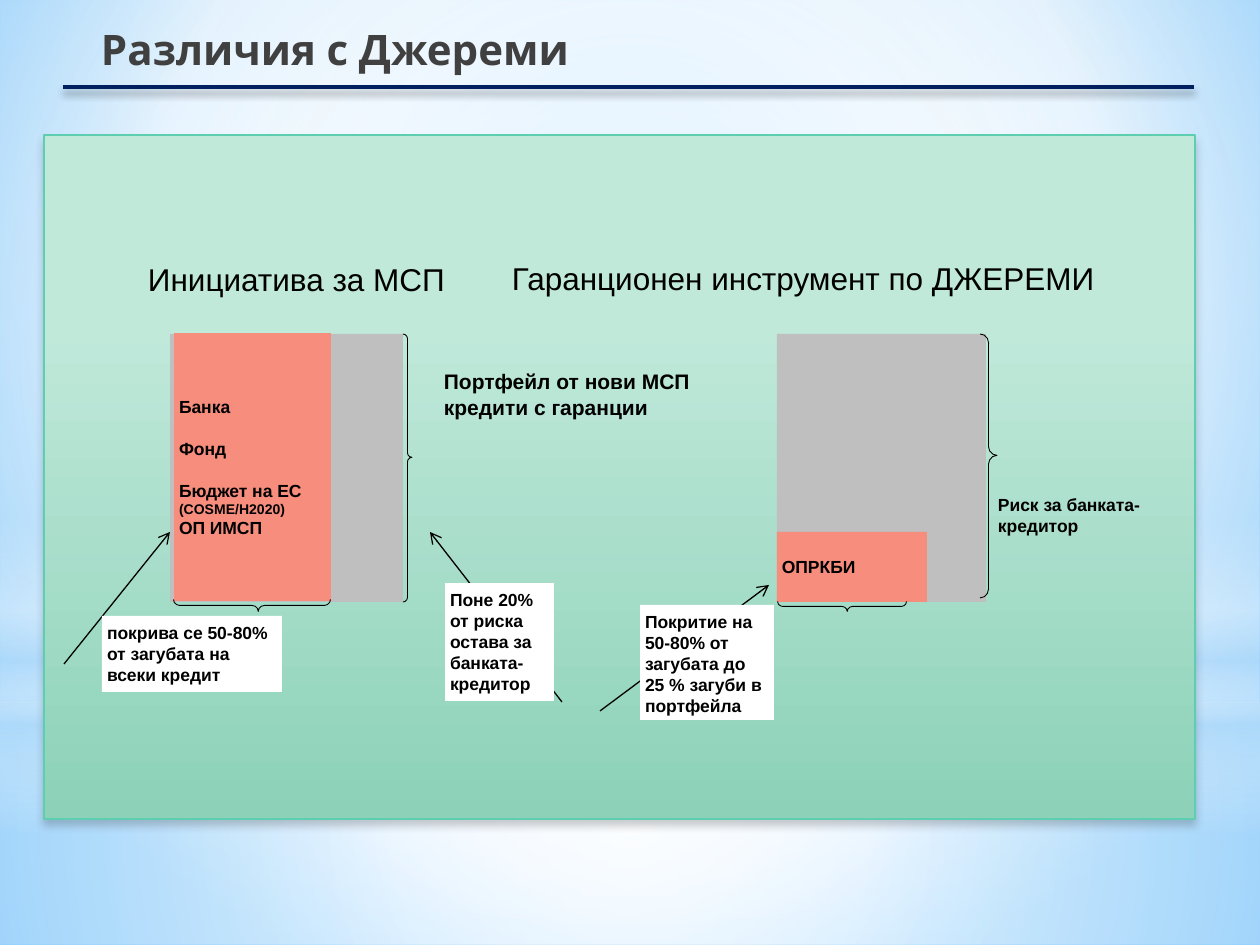
from lxml import etree
from pptx import Presentation
from pptx.dml.color import RGBColor
from pptx.enum.shapes import MSO_CONNECTOR, MSO_SHAPE
from pptx.enum.text import MSO_ANCHOR, PP_ALIGN
from pptx.oxml import parse_xml
from pptx.oxml.ns import nsdecls, qn
from pptx.util import Inches, Pt

SCALE = Inches(10) / 1260
RECTANGLE, OVAL, BRACE = MSO_SHAPE.RECTANGLE, MSO_SHAPE.OVAL, MSO_SHAPE.RIGHT_BRACE
STRAIGHT = MSO_CONNECTOR.STRAIGHT
TOP, MIDDLE = MSO_ANCHOR.TOP, MSO_ANCHOR.MIDDLE
LEFT = PP_ALIGN.LEFT
COLORS = {
    "white": "FFFFFF", "black": "000000", "sky": "B4DCFA", "light_blue": "9ED5FF",
    "blue": "5BB9FF", "mint": "C0E9DA", "green": "8CD1B8", "edge": "5DCEAF",
    "gray": "BFBFBF", "coral": "F78D7C", "navy": "002060", "title": "404040",
}
CENTER = (50, 50, 50, 50)
NOTE_INSETS = (5, 6, 5, 6)
BAR_INSETS = (5, 5, 10, 5)
TEXT_INSETS = (13, 6, 13, 6)


def px(*values):
    """Turn px lengths into EMU."""
    return [round(value * SCALE) for value in values]


def rgb(name):
    """Return the named colour."""
    return RGBColor.from_string(COLORS[name])


def put_gradient(properties, stops, focus=None):
    """Replace a fill by a vertical gradient, or a circular one around focus."""
    stop_xml = "".join(
        f'<a:gs pos="{place * 1000}"><a:srgbClr val="{COLORS[color]}">'
        f'<a:alpha val="{alpha * 1000}"/></a:srgbClr></a:gs>'
        for place, color, alpha in stops)
    if focus:
        sides = " ".join(f'{side}="{value * 1000}"' for side, value in zip("ltrb", focus))
        shade = f'<a:path path="circle"><a:fillToRect {sides}/></a:path>'
    else:
        shade = '<a:lin ang="5400000" scaled="0"/>'
    gradient = parse_xml(f'<a:gradFill {nsdecls("a")} rotWithShape="1">'
                         f'<a:gsLst>{stop_xml}</a:gsLst>{shade}</a:gradFill>')
    properties.replace(properties.find(qn("a:solidFill")), gradient)


def put_shadow(properties, alpha=0, blur=0, distance=0):
    """Give a downward shadow, or none when alpha is zero."""
    for old in properties.findall(qn("a:effectLst")):
        properties.remove(old)
    effects = etree.SubElement(properties, qn("a:effectLst"))
    if alpha:
        shadow = etree.SubElement(effects, qn("a:outerShdw"), blurRad=str(Pt(blur)),
                                  dist=str(Pt(distance)), dir="5400000", rotWithShape="0")
        color = etree.SubElement(shadow, qn("a:srgbClr"), val=COLORS["black"])
        etree.SubElement(color, qn("a:alpha"), val=str(alpha * 1000))


def add_block(page, box, color="white", kind=RECTANGLE):
    """Add a plain filled shape without outline."""
    shape = page.shapes.add_shape(kind, *px(*box))
    shape.shadow.inherit = False
    shape.fill.solid()
    shape.fill.fore_color.rgb = rgb(color)
    shape.line.fill.background()
    return shape


def add_glow(page, box, stops, focus=None, kind=RECTANGLE):
    """Add a gradient shape."""
    shape = add_block(page, box, kind=kind)
    put_gradient(shape._element.spPr, stops, focus)
    return shape


def add_line(page, start, end, color="black", width=0.75, arrow=True):
    """Add a straight line, with an open arrowhead at its end if wanted."""
    line = page.shapes.add_connector(STRAIGHT, *px(*start, *end))
    line.line.color.rgb = rgb(color)
    line.line.width = Pt(width)
    properties = line._element.spPr
    if arrow:
        etree.SubElement(properties.find(qn("a:ln")), qn("a:tailEnd"), type="arrow")
    put_shadow(properties)
    return line


def add_brace(page, box, rotation=0):
    """Add a thin right brace."""
    brace = page.shapes.add_shape(BRACE, *px(*box))
    brace.shadow.inherit = False
    brace.fill.background()
    brace.line.color.rgb = rgb("black")
    brace.line.width = Pt(0.5)
    brace.adjustments[0], brace.adjustments[1] = 0.52, 0.46
    brace.rotation = rotation


def format_span(span, size, bold=True, font="Arial", color="black"):
    """Set the font of a run."""
    span.font.size = Pt(size)
    span.font.bold = bold
    span.font.name = font
    span.font.color.rgb = rgb(color)


def write(shape, paragraphs, size=10, insets=TEXT_INSETS, anchor=TOP, wrap=True, **style):
    """Write left-aligned paragraphs into a shape."""
    frame = shape.text_frame
    frame.text = "\n".join(paragraphs)
    frame.word_wrap = wrap
    frame.vertical_anchor = anchor
    (frame.margin_left, frame.margin_top,
     frame.margin_right, frame.margin_bottom) = px(*insets)
    for para in frame.paragraphs:
        para.alignment = LEFT
        for span in para.runs:
            format_span(span, size, **style)
    return frame


def add_label(page, box, text, **style):
    """Add a text box."""
    write(page.shapes.add_textbox(*px(*box)), [text], **style)


def add_note(page, box, text):
    """Add a white note."""
    write(add_block(page, box), [text], insets=NOTE_INSETS)


def add_backdrop(page):
    """Paint the sky and the green panel."""
    page.background.fill.solid()
    put_gradient(page._element.find(".//" + qn("p:bgPr")),
                 [(0, "light_blue", 100), (60, "white", 100), (100, "blue", 100)],
                 (20, 10, 20, 60))
    add_glow(page, (0, 703, 1260, 242),
             [(0, "white", 91), (37, "white", 76), (100, "sky", 79)], CENTER)
    add_glow(page, (0, 0, 1260, 703),
             [(0, "white", 89), (48, "white", 62), (100, "sky", 79)], CENTER)
    add_glow(page, (0, 519, 1260, 315),
             [(0, "white", 0), (29, "white", 30), (45, "sky", 40),
              (55, "white", 26), (65, "sky", 60), (100, "white", 0)])
    add_glow(page, (0, 220, 1260, 703),
             [(0, "white", 100), (56, "white", 0)], CENTER, OVAL)
    panel = add_glow(page, (44, 135, 1151, 684), [(28, "mint", 100), (100, "green", 100)])
    panel.line.color.rgb = rgb("edge")
    panel.line.width = Pt(0.75)
    put_shadow(panel._element.spPr, 20, 5, 4)


def add_title(page):
    """Add the title and its rule."""
    rule = add_line(page, (63, 87), (1194, 87), "navy", 2.25, arrow=False)
    put_shadow(rule._element.spPr, 40, 4, 3)
    add_label(page, (63, 12, 1131, 73), "Различия с Джереми", size=24, font="Karla",
              color="title", anchor=MIDDLE, insets=(38, 6, 13, 6))


def add_initiative(page):
    """Draw the portfolio of the SME initiative."""
    add_line(page, (562, 702), (430, 532))
    add_line(page, (64, 664), (170, 532))
    add_note(page, (445, 583, 109, 118), "Поне 20% от риска остава за банката-кредитор")
    add_note(page, (102, 616, 180, 76), "покрива се 50-80% от загубата на всеки кредит")
    add_label(page, (135, 254, 334, 50), "Инициатива за МСП", size=18, bold=False, wrap=False)
    add_label(page, (431, 363, 318, 63), "Портфейл от нови МСП кредити с гаранции", size=12)
    add_block(page, (170, 334, 233, 268), "gray")
    frame = write(add_block(page, (174, 333, 157, 268), "coral"),
                  ["Банка", "Фонд", "Бюджет на ЕС ", "ОП ИМСП"],
                  insets=BAR_INSETS, anchor=MIDDLE)
    for para in frame.paragraphs[:2]:
        para.space_after = Pt(12)
    programme = frame.paragraphs[2].add_run()
    programme.text = "(COSME/H2020)"
    format_span(programme, 8)
    add_brace(page, (403, 334, 9, 268))
    add_brace(page, (246, 527, 12, 157), 90)


def add_jeremie(page):
    """Draw the portfolio of the guarantee instrument."""
    add_block(page, (777, 334, 209, 268), "gray")
    write(add_block(page, (777, 532, 150, 70), "coral"), ["ОПРКБИ"],
          insets=BAR_INSETS, anchor=MIDDLE)
    add_label(page, (499, 253, 614, 50), "Гаранционен инструмент по ДЖЕРЕМИ",
              size=18, bold=False, wrap=False)
    add_label(page, (985, 488, 178, 55), "Риск за банката-кредитор")
    add_line(page, (600, 711), (769, 585))
    add_note(page, (640, 605, 134, 115),
             "Покритие на 50-80% от загубата до 25 % загуби в портфейла")
    add_brace(page, (980, 334, 17, 264))
    add_brace(page, (837, 542, 10, 129), 90)


def main():
    """Build and save the slide."""
    deck = Presentation()
    deck.slide_width, deck.slide_height = px(1260, 945)
    page = deck.slides.add_slide(deck.slide_layouts[6])
    add_backdrop(page)
    add_initiative(page)
    add_jeremie(page)
    add_title(page)
    deck.save("out.pptx")


if __name__ == "__main__":
    main()
